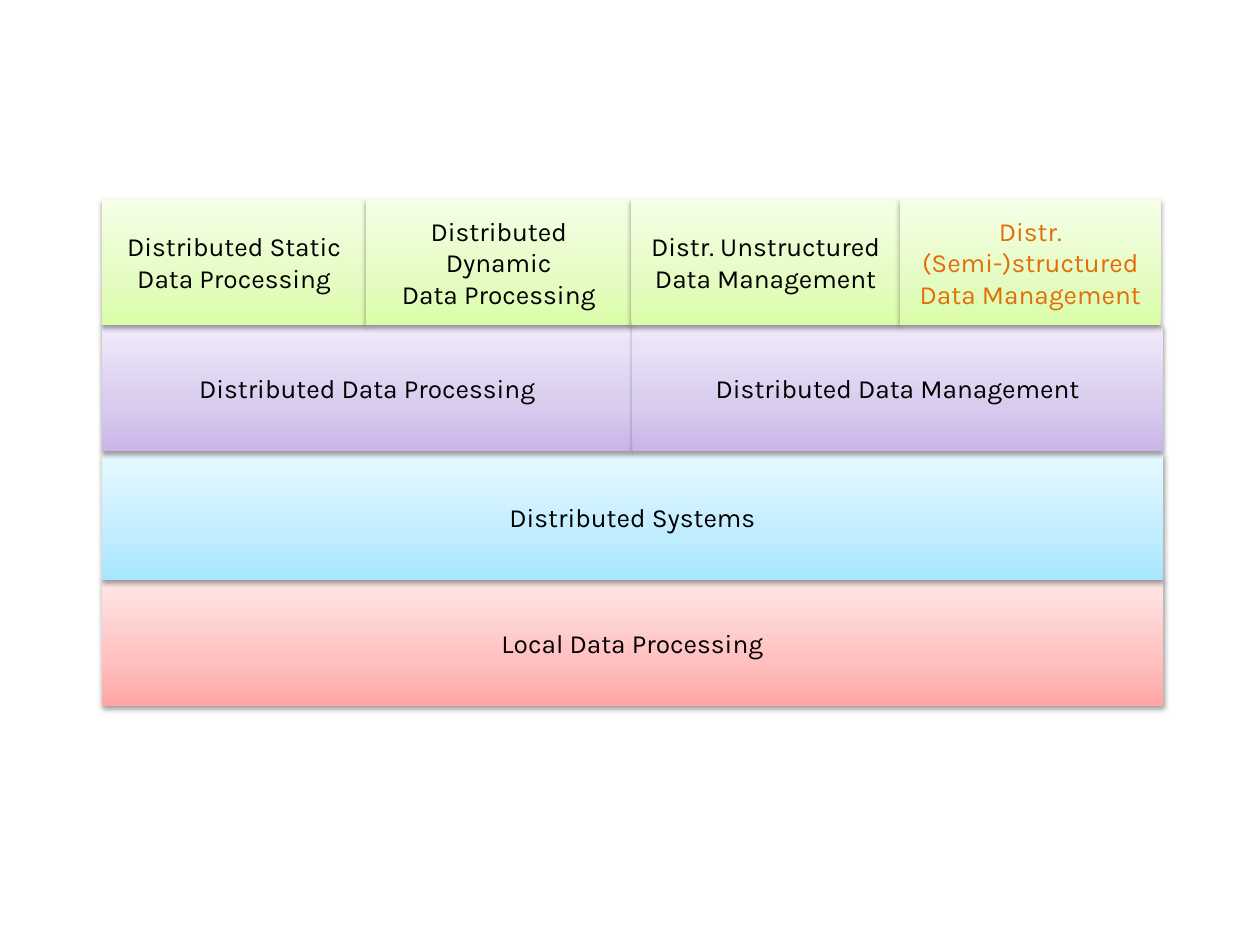
from copy import deepcopy
from dataclasses import dataclass
from itertools import pairwise

from lxml import etree
from pptx import Presentation
from pptx.dml.color import RGBColor
from pptx.enum import shapes, text
from pptx.oxml import ns
from pptx.util import Pt


@dataclass(frozen=True)
class Theme:
    font: str = "Karla"
    size: float = 15
    ink: str = "000000"
    highlight: str = "E46C0A"
    stops: tuple = (0, 0.35, 1)
    local: tuple = ("FFA6A5", "FFC0BF", "FFE7E7")
    systems: tuple = ("A7E6FF", "C1EDFF", "E7F8FF")
    areas: tuple = ("C9B5E8", "D8CBEE", "F0EAF9")
    topics: tuple = ("DAFDA7", "E4FCC2", "F5FFE7")


THEME = Theme()
STACK_BOX = (58.3, 113.8, 606.2, 289.4)
TIER_HEIGHT = 72
HIGHLIGHTED = "Distr. (Semi-)structured\nData Management"

TIERS = [
    (217.4, THEME.local, (0, 1), ["Local Data Processing"]),
    (145.4, THEME.systems, (0, 1), ["Distributed Systems"]),
    (72, THEME.areas, (0, 0.5, 1),
     ["Distributed Data Processing", "Distributed Data Management"]),
    (0, THEME.topics, (0, 0.249, 0.499, 0.752, 0.998),
     ["Distributed Static\nData Processing",
      "Distributed Dynamic\nData Processing",
      "Distr. Unstructured\nData Management",
      HIGHLIGHTED]),
]


def apply_gradient(block, colours):
    block.fill.gradient()
    block.fill.gradient_angle = 90
    stop_list = block._element.spPr.find(".//" + ns.qn("a:gsLst"))
    stop_list.append(deepcopy(stop_list[-1]))
    for stop, position, colour in zip(block.fill.gradient_stops, THEME.stops, colours):
        stop.position = position
        stop.color.rgb = RGBColor.from_string(colour)


def apply_shadow(block):
    block.shadow.inherit = False
    effects = block._element.spPr.find(ns.qn("a:effectLst"))
    shadow = etree.SubElement(
        effects, ns.qn("a:outerShdw"), blurRad=str(Pt(3.1)), dist=str(Pt(1.6)),
        dir="5400000", rotWithShape="0")
    colour = etree.SubElement(shadow, ns.qn("a:srgbClr"), val="000000")
    etree.SubElement(colour, ns.qn("a:alpha"), val="38000")


def add_block(slide, box, label, colours):
    block = slide.shapes.add_shape(
        shapes.MSO_SHAPE.RECTANGLE, *(Pt(length) for length in box))
    apply_gradient(block, colours)
    block.line.fill.background()
    apply_shadow(block)
    frame = block.text_frame
    frame.word_wrap = True
    frame.vertical_anchor = text.MSO_ANCHOR.MIDDLE
    frame.text = label
    ink = THEME.highlight if label == HIGHLIGHTED else THEME.ink
    for paragraph in frame.paragraphs:
        paragraph.alignment = text.PP_ALIGN.CENTER
        paragraph.font.name = THEME.font
        paragraph.font.size = Pt(THEME.size)
        paragraph.font.color.rgb = RGBColor.from_string(ink)


def add_tier(slide, box, colours, edges, labels):
    left, top, width, height = box
    for (start, end), label in zip(pairwise(edges), labels):
        block_box = (left + start * width, top, (end - start) * width, height)
        add_block(slide, block_box, label, colours)


def add_stack(slide, box):
    left, top, width, _ = box
    for offset, colours, edges, labels in TIERS:
        tier_box = (left, top + offset, width, TIER_HEIGHT)
        add_tier(slide, tier_box, colours, edges, labels)


def main():
    deck = Presentation()
    deck.slide_width, deck.slide_height = Pt(720), Pt(540)
    slide = deck.slides.add_slide(deck.slide_layouts[6])
    add_stack(slide, STACK_BOX)
    deck.save("out.pptx")


if __name__ == "__main__":
    main()
